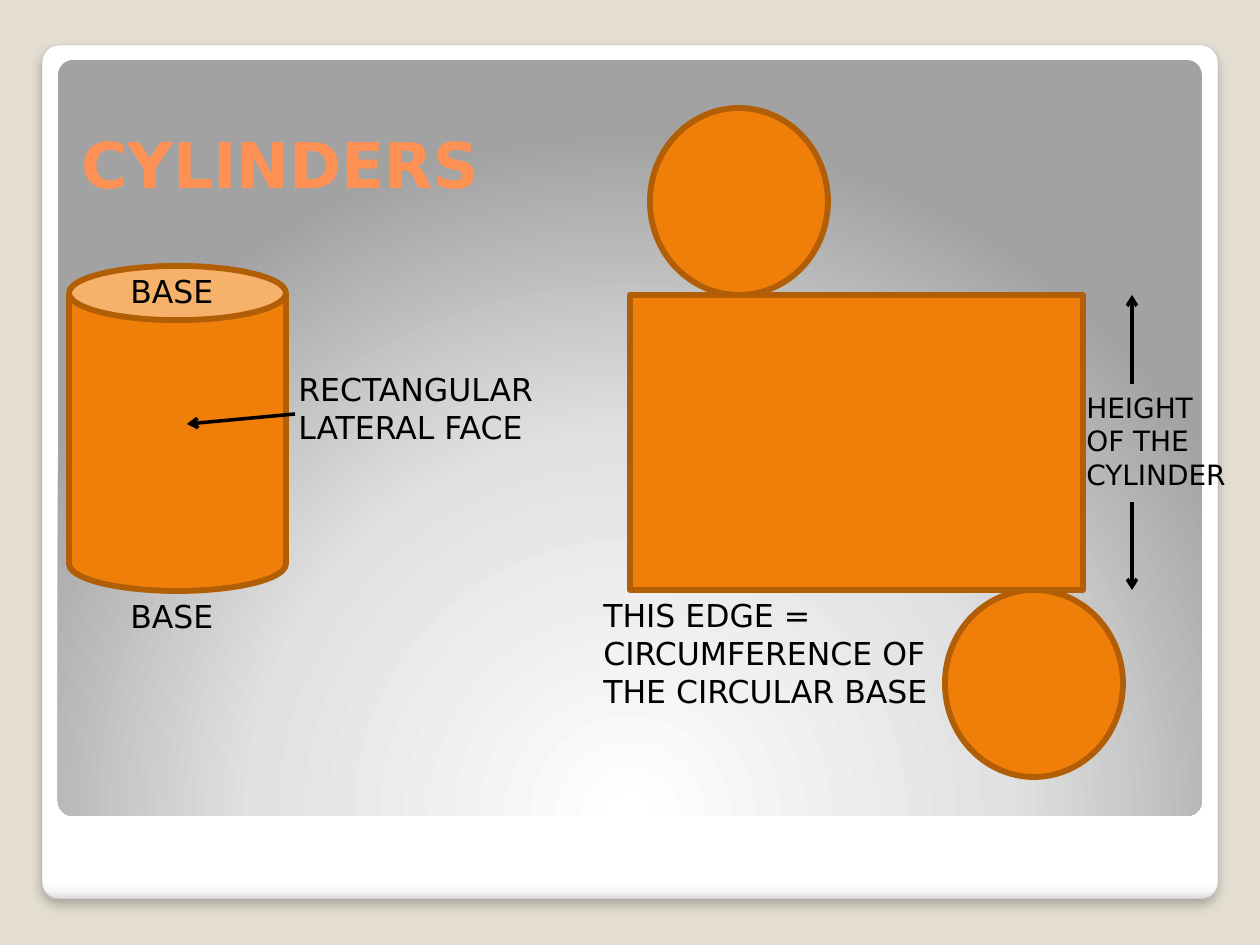
import lxml.etree
import pptx
import pptx.dml.color
import pptx.enum.shapes
import pptx.enum.text
import pptx.oxml
import pptx.oxml.ns
import pptx.util

SCALE = 914400 / 126
FONT = "DejaVu Sans"
ORANGE = "F07F09"
BROWN = "B25E07"
BLACK = "000000"
SHAPE = pptx.enum.shapes.MSO_SHAPE
ANCHOR = pptx.enum.text.MSO_ANCHOR


def px(length):
    return pptx.util.Emu(round(length * SCALE))


def color(code):
    return pptx.dml.color.RGBColor.from_string(code)


def add_child(parent, tag, **values):
    child = lxml.etree.SubElement(parent, pptx.oxml.ns.qn(tag))
    for name, value in values.items():
        child.set(name, str(value))
    return child


def set_stroke(item, code, points):
    item.line.color.rgb = color(code)
    item.line.width = pptx.util.Pt(points)


def add_solid(page, kind, left, top, width, height):
    shape = page.shapes.add_shape(kind, px(left), px(top), px(width), px(height))
    shape.shadow.inherit = False
    shape.fill.solid()
    shape.fill.fore_color.rgb = color(ORANGE)
    set_stroke(shape, BROWN, 3.35)
    return shape


def set_gradient(shape, stops):
    shape.fill.background()
    properties = shape._element.spPr
    empty = properties.find(pptx.oxml.ns.qn("a:noFill"))
    gradient = pptx.oxml.parse_xml(
        f'<a:gradFill {pptx.oxml.ns.nsdecls("a")} rotWithShape="1"/>')
    properties.replace(empty, gradient)
    stop_list = add_child(gradient, "a:gsLst")
    for percent, code in stops:
        stop = add_child(stop_list, "a:gs", pos=percent * 1000)
        add_child(stop, "a:srgbClr", val=code)
    return gradient


def write(span, text, **values):
    span.text = text
    span.font.color.rgb = color(values.pop("code", BLACK))
    for name, value in {"name": FONT, **values}.items():
        setattr(span.font, name, value)


def add_label(page, left, top, width, height, lines, points=18):
    box = page.shapes.add_textbox(px(left), px(top), px(width), px(height))
    frame = box.text_frame
    frame.word_wrap = True
    for index, line in enumerate(lines):
        para = frame.add_paragraph() if index else frame.paragraphs[0]
        write(para.add_run(), line, size=pptx.util.Pt(points))


def add_arrow(page, start_x, start_y, end_x, end_y):
    arrow = page.shapes.add_connector(
        pptx.enum.shapes.MSO_CONNECTOR.STRAIGHT,
        px(start_x), px(start_y), px(end_x), px(end_y))
    set_stroke(arrow, BLACK, 2)
    add_child(arrow.line._get_or_add_ln(), "a:tailEnd", type="arrow")
    add_child(arrow._element.spPr, "a:effectLst")


def add_card(page, left, top, width, height):
    frame = add_solid(page, SHAPE.ROUNDED_RECTANGLE, left, top, width, height)
    panel = add_solid(page, SHAPE.ROUNDED_RECTANGLE,
                      left + 16, top + 15, width - 32, 756)
    for shape in (frame, panel):
        shape.adjustments[0] = 0.02

    gradient = set_gradient(frame, [(0, "FFFFFF"), (98, "FFFFFF"),
                                    (99, "F7F7F7"), (100, "DADADA")])
    add_child(gradient, "a:lin", ang=90 * 60000, scaled=0)
    set_stroke(frame, "A4A4A4", 0.16)
    effects = frame._element.spPr.find(pptx.oxml.ns.qn("a:effectLst"))
    shadow = add_child(effects, "a:outerShdw", blurRad=pptx.util.Pt(6),
                       dist=pptx.util.Pt(4), dir=90 * 60000, algn="t", rotWithShape=0)
    add_child(add_child(shadow, "a:srgbClr", val=BLACK), "a:alpha", val=25000)

    gradient = set_gradient(panel, [(0, "FFFFFF"), (55, "E1E1E1"), (100, "A2A2A2")])
    radial = add_child(gradient, "a:path", path="circle")
    add_child(radial, "a:fillToRect", l=50000, t=175000, r=50000, b=-75000)
    panel.line.fill.background()


def add_title(page, left, top, width, height):
    title = page.shapes.title
    place = {"left": left, "top": top, "width": width, "height": height}
    for name, value in place.items():
        setattr(title, name, px(value))
    frame = title.text_frame
    frame.word_wrap = True
    frame.vertical_anchor = ANCHOR.MIDDLE
    para = frame.paragraphs[0]
    para.alignment = pptx.enum.text.PP_ALIGN.LEFT
    write(para.add_run(), "CYLINDERS", size=pptx.util.Pt(36), bold=True, code="FF9155")


def add_cylinder(page, left, top, width, height):
    add_solid(page, SHAPE.CAN, left, top, width, height)
    for label_top in (top, top + height):
        add_label(page, left + 49, label_top, 137, 50, ["BASE"])
    add_label(page, left + width, top + 98, 364, 89, ["RECTANGULAR LATERAL FACE"])
    add_arrow(page, left + 226, top + 148, left + 118, top + 158)


def add_net(page, left, top, width, height):
    circle_width, circle_height = 178, 187
    bottom = top + height
    right = left + width
    add_solid(page, SHAPE.RECTANGLE, left, top, width, height)
    add_label(page, left - 39, bottom, 364, 127,
              ["THIS EDGE = CIRCUMFERENCE OF THE CIRCULAR BASE"])
    add_label(page, right - 9, top + 89, 186, 115,
              ["HEIGHT", "OF THE", "CYLINDER"], points=16)
    for circle_left, circle_top in ((left + 20, top - circle_height),
                                    (left + 315, bottom)):
        add_solid(page, SHAPE.OVAL, circle_left, circle_top,
                  circle_width, circle_height)
    add_arrow(page, right + 49, bottom - 88, right + 49, bottom)
    add_arrow(page, right + 49, top + 89, right + 49, top)


def main():
    deck = pptx.Presentation()
    deck.slide_width, deck.slide_height = px(1260), px(945)
    page = deck.slides.add_slide(deck.slide_layouts[5])
    page.background.fill.solid()
    page.background.fill.fore_color.rgb = color("E3DED1")
    add_card(page, 42, 45, 1176, 854)
    add_title(page, 69, 110, 520, 106)
    page.shapes._spTree.append(page.shapes.title._element)
    add_cylinder(page, 69, 266, 217, 325)
    add_net(page, 630, 295, 453, 295)
    deck.save("out.pptx")


if __name__ == "__main__":
    main()
